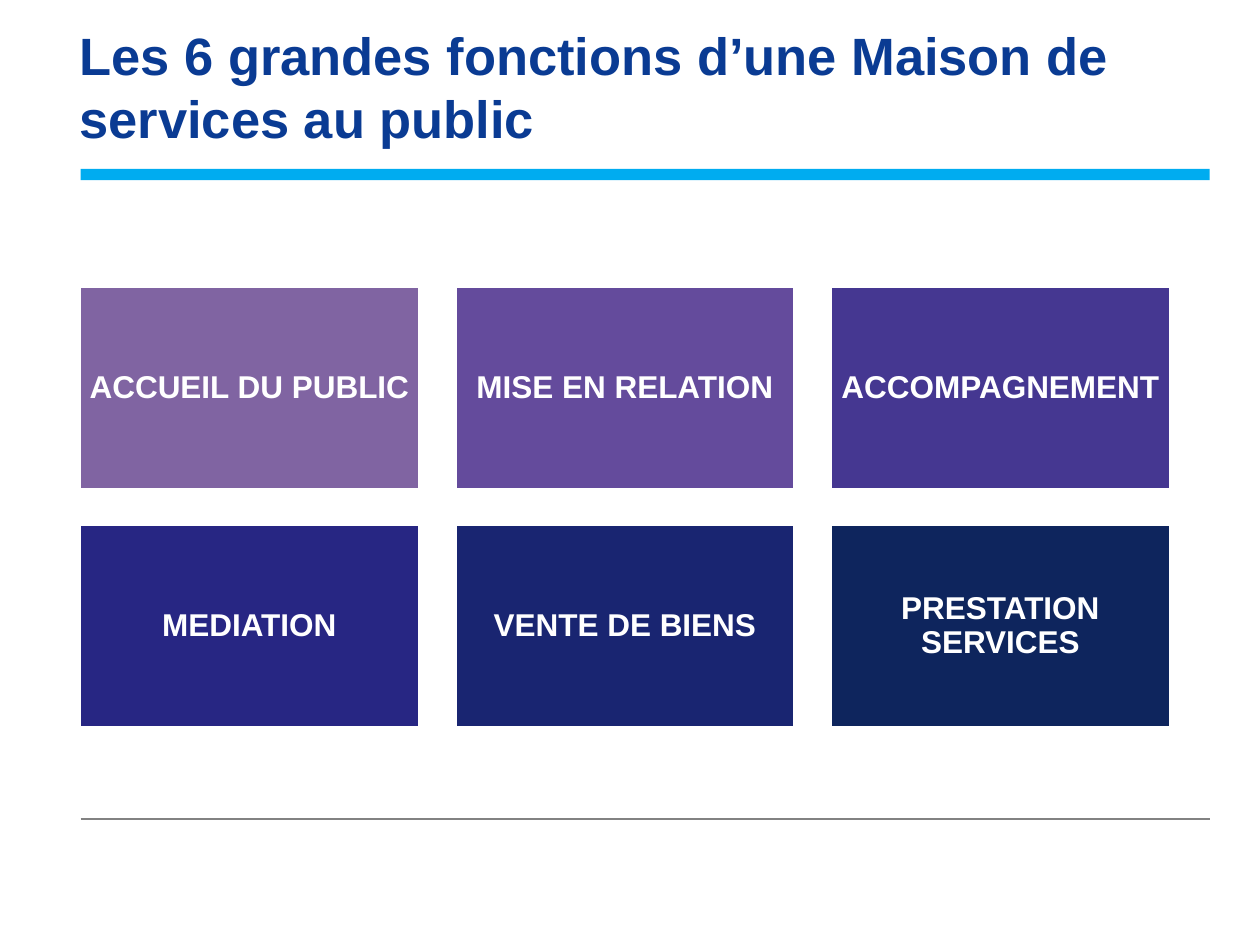
from pptx import Presentation
from pptx.dml.color import RGBColor
from pptx.enum.shapes import MSO_CONNECTOR, MSO_SHAPE
from pptx.enum.text import MSO_ANCHOR, PP_ALIGN
from pptx.util import Inches, Pt
from lxml.etree import SubElement
from pptx.oxml.ns import qn

WHITE = RGBColor(0xFF, 0xFF, 0xFF)
TITLE_BLUE = RGBColor(0x0A, 0x3B, 0x93)
BAR_CYAN = RGBColor(0x00, 0xAC, 0xF0)
RULE_GREY = RGBColor(0x82, 0x82, 0x82)

FUNCTIONS = [
    ("ACCUEIL DU PUBLIC", RGBColor(0x80, 0x64, 0xA2)),
    ("MISE EN RELATION", RGBColor(0x64, 0x4B, 0x9C)),
    ("ACCOMPAGNEMENT", RGBColor(0x45, 0x37, 0x91)),
    ("MEDIATION", RGBColor(0x27, 0x26, 0x83)),
    ("VENTE DE BIENS", RGBColor(0x19, 0x25, 0x71)),
    ("PRESTATION SERVICES", RGBColor(0x0E, 0x25, 0x5D)),
]
COLUMNS = 3
LEFT, GRID_TOP = 0.63, 2.27
TILE_WIDTH, TILE_HEIGHT = 2.7, 1.62
COLUMN_STEP, ROW_STEP = 2.98, 1.89
RULE_LEFT, RULE_WIDTH = 0.64, 8.96


def set_up_frame(frame, anchor, inset):
    frame.word_wrap = True
    frame.vertical_anchor = anchor
    frame.margin_left = frame.margin_right = Inches(inset)
    frame.margin_top = frame.margin_bottom = Inches(inset)


def add_words(paragraph, words, size, color):
    run = paragraph.add_run()
    run.text = words
    run.font.name = "Arial"
    run.font.size = Pt(size)
    run.font.bold = True
    run.font.color.rgb = color


deck = Presentation()
deck.slide_width, deck.slide_height = Inches(10), Inches(7.5)
slide = deck.slides.add_slide(deck.slide_layouts[6])

footer_rule = slide.shapes.add_connector(
    MSO_CONNECTOR.STRAIGHT, Inches(RULE_LEFT), Inches(6.5),
    Inches(RULE_LEFT + RULE_WIDTH), Inches(6.5))
footer_rule.line.color.rgb = RULE_GREY
footer_rule.line.width = Pt(1)
SubElement(footer_rule._element.spPr, qn("a:effectLst"))

title_bar = slide.shapes.add_shape(
    MSO_SHAPE.RECTANGLE, Inches(RULE_LEFT), Inches(1.34),
    Inches(RULE_WIDTH), Inches(0.09))
title_bar.shadow.inherit = False
title_bar.fill.solid()
title_bar.fill.fore_color.rgb = BAR_CYAN
title_bar.line.fill.background()

title = slide.shapes.add_textbox(
    Inches(LEFT), Inches(0.39), Inches(8.98), Inches(0.79))
set_up_frame(title.text_frame, MSO_ANCHOR.BOTTOM, 0)
add_words(title.text_frame.paragraphs[0],
          "Les 6 grandes fonctions d’une Maison de services au public",
          30, TITLE_BLUE)

for index, (function, color) in enumerate(FUNCTIONS):
    row, column = divmod(index, COLUMNS)
    tile = slide.shapes.add_shape(
        MSO_SHAPE.RECTANGLE,
        Inches(LEFT + column * COLUMN_STEP), Inches(GRID_TOP + row * ROW_STEP),
        Inches(TILE_WIDTH), Inches(TILE_HEIGHT))
    tile.shadow.inherit = False
    tile.fill.solid()
    tile.fill.fore_color.rgb = color
    tile.line.color.rgb = WHITE
    tile.line.width = Pt(2)
    set_up_frame(tile.text_frame, MSO_ANCHOR.MIDDLE, 0.07)
    label = tile.text_frame.paragraphs[0]
    label.alignment = PP_ALIGN.CENTER
    label.line_spacing = 0.9
    add_words(label, function, 18, WHITE)

deck.save("out.pptx")
